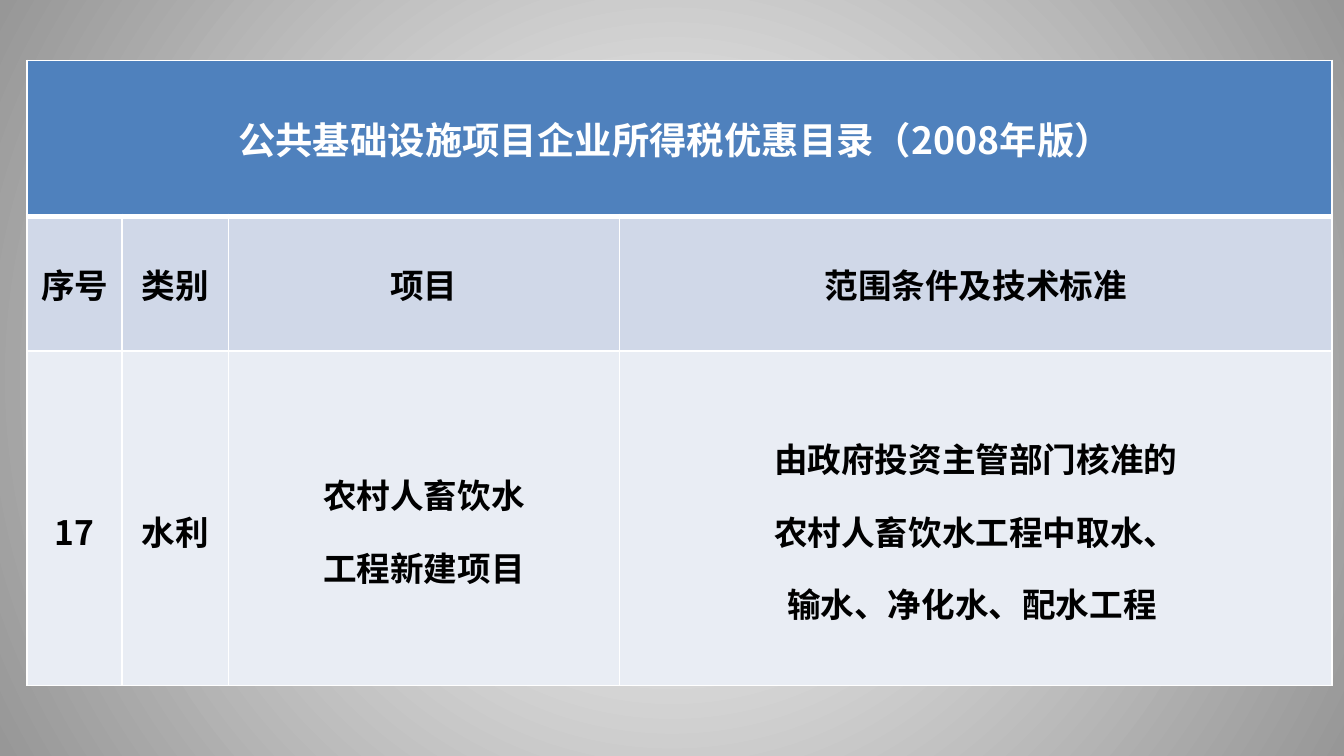
from lxml import etree
from pptx import Presentation
from pptx.dml.color import RGBColor
from pptx.enum.text import MSO_ANCHOR, PP_ALIGN
from pptx.oxml.ns import qn
from pptx.util import Inches, Pt

MIDDLE = MSO_ANCHOR.MIDDLE
CENTER = PP_ALIGN.CENTER
CJK = "Noto Sans CJK SC"
LATIN = "Calibri"

COLORS = {
    "white": "FFFFFF",
    "black": "000000",
    "backdrop": "979797",
    "title": "4F81BD",
    "header": "D0D8E8",
    "body": "E9EDF4",
}

TITLE = "公共基础设施项目企业所得税优惠目录（2008年版） "
HEADERS = ["序号", "类别", "项目", "范围条件及技术标准"]
BODY = [
    "17",
    "水利",
    "农村人畜饮水\n工程新建项目",
    "由政府投资主管部门核准的\n农村人畜饮水工程中取水、\n输水、净化水、配水工程 ",
]
COLUMNS = [0.071, 0.079, 0.291, 0.53]  # shares of the slide width
ROWS = [0.206, 0.178, 0.443]  # shares of the slide height


def rgb(name):
    return RGBColor.from_string(COLORS[name])


class Deck:
    def __init__(self, width, height):
        self.prs = Presentation()
        self.prs.slide_width = Inches(width)
        self.prs.slide_height = Inches(height)
        self.s = self.prs.slides.add_slide(self.prs.slide_layouts[6])

    def x(self, share):
        return round(self.prs.slide_width * share)

    def y(self, share):
        return round(self.prs.slide_height * share)

    def radial_background(self, inner, outer):
        fill = self.s.background.fill
        fill.gradient()
        for stop, color in zip(fill.gradient_stops, (inner, outer)):
            stop.color.rgb = rgb(color)
        grad = self.s.element.find(".//" + qn("a:gradFill"))
        grad.remove(grad.find(qn("a:lin")))
        circle = etree.SubElement(grad, qn("a:path"), path="circle")
        etree.SubElement(circle, qn("a:fillToRect"),
                         l="50000", t="50000", r="50000", b="50000")

    def table(self, left, top, columns, rows):
        frame = self.s.shapes.add_table(
            len(rows), len(columns), self.x(left), self.y(top),
            self.x(sum(columns)), self.y(sum(rows)))
        table = frame.table
        for column, share in zip(table.columns, columns):
            column.width = self.x(share)
        for row, share in zip(table.rows, rows):
            row.height = self.y(share)
        return table

    def cell(self, cell, text, fill, color="black", size=18, font=CJK,
             spacing=None, top=1, bottom=1):
        self.borders(cell, L=1, R=1, T=top, B=bottom)
        cell.fill.solid()
        cell.fill.fore_color.rgb = rgb(fill)
        cell.vertical_anchor = MIDDLE
        cell.text_frame.text = text
        for p in cell.text_frame.paragraphs:
            p.alignment = CENTER
            p.line_spacing = spacing
            for r in p.runs:
                r.font.size = Pt(size)
                r.font.bold = True
                r.font.color.rgb = rgb(color)
                r.font.name = font
                etree.SubElement(r.font._element, qn("a:ea"), typeface=CJK)

    def borders(self, cell, **widths):
        """Draw white cell borders; must run before the cell is filled."""
        props = cell._tc.get_or_add_tcPr()
        for side, width in widths.items():
            line = etree.SubElement(props, qn("a:ln" + side), w=str(Pt(width)))
            fill = etree.SubElement(line, qn("a:solidFill"))
            etree.SubElement(fill, qn("a:srgbClr"), val=COLORS["white"])


def main():
    deck = Deck(10, 5.625)
    deck.radial_background("white", "backdrop")
    table = deck.table(0.02, 0.08, COLUMNS, ROWS)

    table.cell(0, 0).merge(table.cell(0, len(COLUMNS) - 1))
    for i, (header, body) in enumerate(zip(HEADERS, BODY)):
        deck.cell(table.cell(0, i), "" if i else TITLE, "title",
                  color="white", size=20, bottom=3)
        deck.cell(table.cell(1, i), header, "header", font=LATIN, top=3)
        deck.cell(table.cell(2, i), body, "body", spacing=1.5)

    deck.prs.save("out.pptx")


if __name__ == "__main__":
    main()
